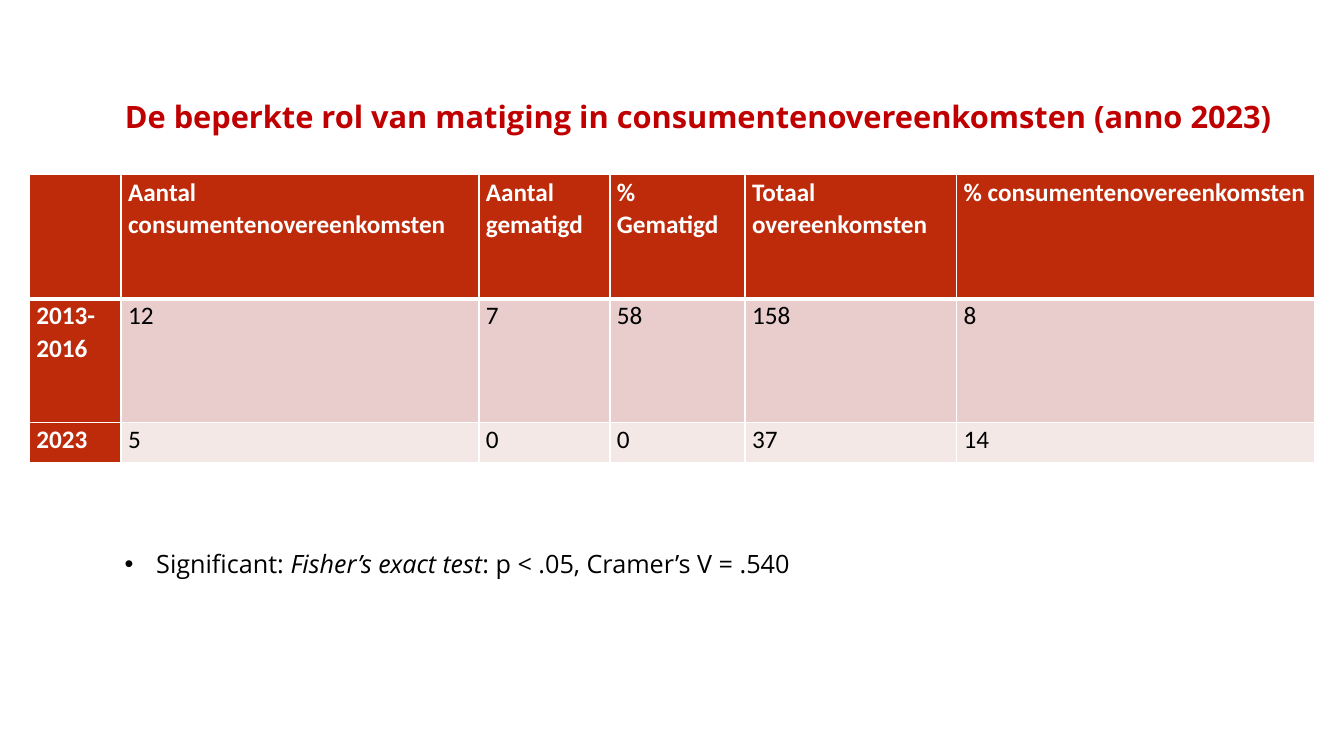
from pptx import Presentation
from pptx import util as u
from pptx.dml.color import RGBColor
from pptx.enum import text
from pptx.oxml import parse_xml
from pptx.oxml.ns import nsdecls

TITLE = "De beperkte rol van matiging in consumentenovereenkomsten (anno 2023)"
ROWS = [
    ["", "Aantal consumentenovereenkomsten", "Aantal gematigd", "% Gematigd",
     "Totaal overeenkomsten", "% consumentenovereenkomsten"],
    ["2013-2016", "12", "7", "58", "158", "8"],
    ["2023", "5", "0", "0", "37", "14"],
]
FINDING = [("Significant: ", False), ("Fisher’s exact test", True),
           (": p < .05, Cramer’s V = .540", False)]

COLUMN_WIDTHS = [65.5, 255.6, 93.6, 96.5, 151.2, 255.6]
ROW_HEIGHTS = [88.5, 88.5, 28.8]
ROW_FILLS = ["BD2B0B", "E8CDCC", "F4E8E7"]
HEADER_FILL, WHITE, BLACK, TITLE_RED = "BD2B0B", "FFFFFF", "000000", "C00000"
TEXT_LEFT, TEXT_WIDTH = 82, 850
TABLE_LEFT, TABLE_TOP = 21, 124.9


def place(shape, left, top, width, height):
    shape.left, shape.top = u.Pt(left), u.Pt(top)
    shape.width, shape.height = u.Pt(width), u.Pt(height)


def style(font, name, size, color, bold=False):
    font.name, font.size, font.bold = name, u.Pt(size), bold
    font.color.rgb = RGBColor.from_string(color)


def add_borders(cell, top, bottom):
    """Draw white cell borders; the side borders are always 1 pt."""
    properties = cell._tc.get_or_add_tcPr()
    for index, (side, width) in enumerate(
            [("L", 1), ("R", 1), ("T", top), ("B", bottom)]):
        properties.insert(index, parse_xml(
            f'<a:ln{side} {nsdecls("a")} w="{u.Pt(width)}"><a:solidFill>'
            f'<a:srgbClr val="{WHITE}"/></a:solidFill></a:ln{side}>'))


def add_title(page):
    title = page.shapes.title
    place(title, TEXT_LEFT, 19.5, TEXT_WIDTH, 80.5)
    frame = title.text_frame
    frame.auto_size = text.MSO_AUTO_SIZE.NONE
    frame.vertical_anchor = text.MSO_ANCHOR.BOTTOM
    para = frame.paragraphs[0]
    para.alignment = text.PP_ALIGN.LEFT
    para.line_spacing = u.Pt(28)
    span = para.add_run()
    span.text = TITLE
    style(span.font, "Open Sans", 22, TITLE_RED, True)


def add_results(page):
    table = page.shapes.add_table(
        len(ROWS), len(COLUMN_WIDTHS), u.Pt(TABLE_LEFT), u.Pt(TABLE_TOP),
        u.Pt(sum(COLUMN_WIDTHS)), u.Pt(sum(ROW_HEIGHTS))).table
    table.first_col = True
    for column, width in zip(table.columns, COLUMN_WIDTHS):
        column.width = u.Pt(width)
    for r, values in enumerate(ROWS):
        table.rows[r].height = u.Pt(ROW_HEIGHTS[r])
        for c, value in enumerate(values):
            cell = table.cell(r, c)
            header = r == 0 or c == 0
            cell.margin_left = cell.margin_right = u.Pt(5)
            cell.margin_top = cell.margin_bottom = 0
            cell.fill.solid()
            cell.fill.fore_color.rgb = RGBColor.from_string(
                HEADER_FILL if header else ROW_FILLS[r])
            add_borders(cell, 3 if r == 1 else 1, 3 if r == 0 else 1)
            if value:
                para = cell.text_frame.paragraphs[0]
                para.line_spacing, para.space_after = 1.07, u.Pt(8)
                span = para.add_run()
                span.text = value
                style(span.font, "Calibri", 18, WHITE if header else BLACK, header)


def add_finding(page):
    box = page.shapes.add_textbox(0, 0, 0, 0)
    place(box, TEXT_LEFT, 388, TEXT_WIDTH, 32)
    box.text_frame.word_wrap = True
    para = box.text_frame.paragraphs[0]
    properties = para._p.get_or_add_pPr()
    properties.set("marL", str(u.Pt(22.5)))
    properties.set("indent", str(-u.Pt(22.5)))
    properties.append(parse_xml(f'<a:buFont {nsdecls("a")} typeface="Arial"/>'))
    properties.append(parse_xml(f'<a:buChar {nsdecls("a")} char="•"/>'))
    for words, italic in FINDING:
        span = para.add_run()
        span.text = words
        style(span.font, "Open Sans", 18, BLACK)
        span.font.italic = italic


def main():
    deck = Presentation()
    deck.slide_width, deck.slide_height = u.Pt(960), u.Pt(540)
    page = deck.slides.add_slide(deck.slide_layouts[5])
    add_title(page)
    add_results(page)
    add_finding(page)
    deck.save("out.pptx")


if __name__ == "__main__":
    main()
